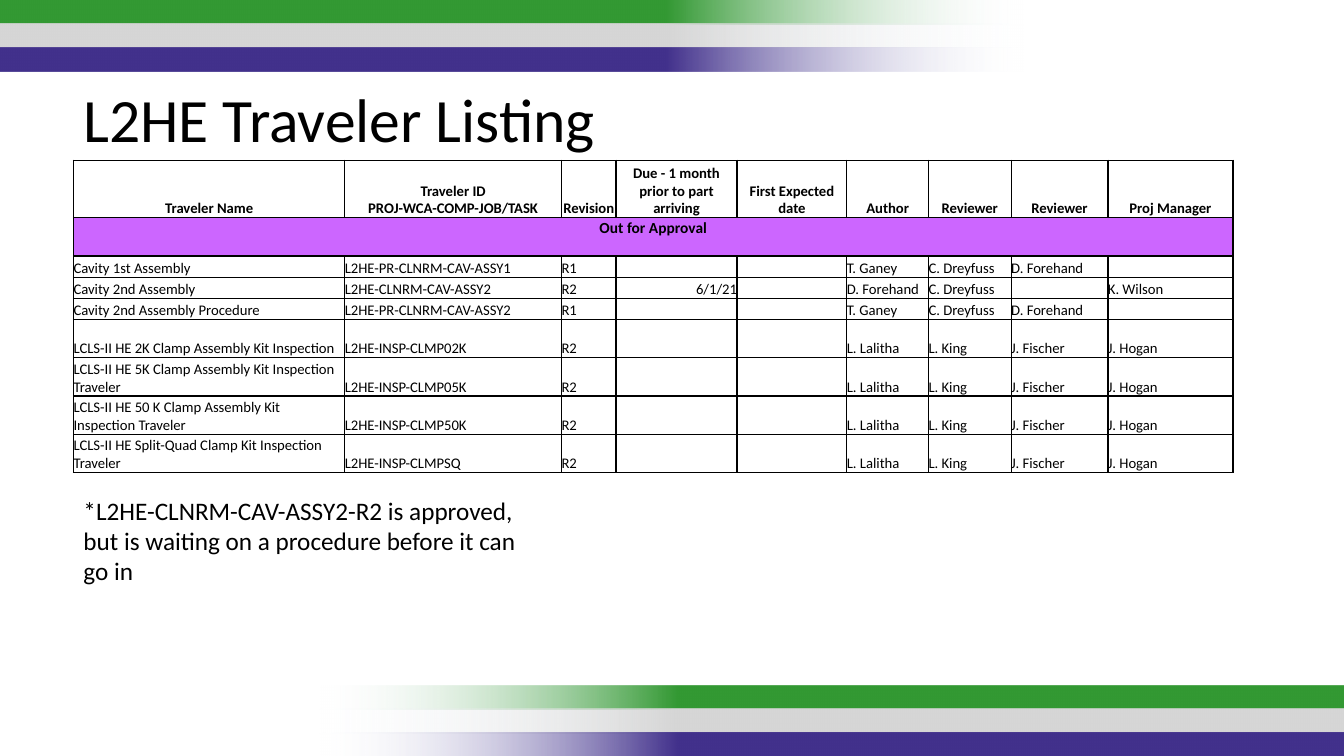
from lxml.etree import SubElement
from pptx import Presentation
from pptx.dml.color import RGBColor
from pptx.enum.shapes import MSO_SHAPE
from pptx.enum.text import MSO_ANCHOR, PP_ALIGN
from pptx.oxml.ns import qn
from pptx.util import Inches, Pt

BLACK = RGBColor(0x00, 0x00, 0x00)
GREEN = RGBColor(0x33, 0x99, 0x33)
GREY = RGBColor(0xD6, 0xD6, 0xD6)
INDIGO = RGBColor(0x42, 0x31, 0x8C)
PALE = RGBColor(0xF7, 0xFA, 0xFD)
VIOLET = RGBColor(0xCC, 0x66, 0xFF)

COLUMN_WIDTHS = [2.69, 2.15, 0.54, 1.2, 1.09, 0.81, 0.82, 0.96, 1.24]
ROW_HEIGHTS = [0.57, 0.38] + [0.21] * 3 + [0.38] * 4
HEADINGS = ["Traveler Name", "Traveler ID\nPROJ-WCA-COMP-JOB/TASK", "Revision",
            "Due - 1 month prior to part arriving", "First Expected date",
            "Author", "Reviewer", "Reviewer", "Proj Manager"]
CAVITY_TEAM = ["T. Ganey", "C. Dreyfuss", "D. Forehand", ""]
CLAMP_TEAM = ["L. Lalitha", "L. King", "J. Fischer", "J. Hogan"]
CLAMP_KITS = [("2K Clamp Assembly Kit Inspection", "02K"),
              ("5K Clamp Assembly Kit Inspection Traveler", "05K"),
              ("50 K Clamp Assembly Kit Inspection Traveler", "50K"),
              ("Split-Quad Clamp Kit Inspection Traveler", "SQ")]
TRAVELERS = [
    ["Cavity 1st Assembly", "L2HE-PR-CLNRM-CAV-ASSY1", "R1", "", ""] + CAVITY_TEAM,
    ["Cavity 2nd Assembly", "L2HE-CLNRM-CAV-ASSY2", "R2", "6/1/21", "",
     "D. Forehand", "C. Dreyfuss", "", "K. Wilson"],
    ["Cavity 2nd Assembly Procedure", "L2HE-PR-CLNRM-CAV-ASSY2", "R1", "", ""] + CAVITY_TEAM,
] + [[f"LCLS-II HE {kit}", f"L2HE-INSP-CLMP{code}", "R2", "", ""] + CLAMP_TEAM
     for kit, code in CLAMP_KITS]
DUE_COLUMN = 3


class TravelerPage:
    """Holds the text style and the current slide."""

    def __init__(self, page, font="Calibri", color=BLACK):
        self.page, self.font, self.color = page, font, color

    def add_words(self, para, words, size, bold=False):
        for index, line in enumerate(words.split("\n")):
            if index:
                para.add_line_break()
            span = para.add_run()
            span.text = line
            span.font.name, span.font.size, span.font.bold = self.font, Pt(size), bold
            span.font.color.rgb = self.color

    def add_stripe(self, left, top, color, rotation=0):
        bar = self.page.shapes.add_shape(MSO_SHAPE.RECTANGLE, Inches(left), Inches(top),
                                         Inches(10.17), Inches(0.24))
        bar.shadow.inherit = False
        bar.rotation = rotation
        bar.line.fill.background()
        bar.fill.gradient()
        bar.fill.gradient_angle = 0
        clear, solid = bar.fill.gradient_stops
        clear.position, clear.color.rgb = 0, PALE
        solid.position, solid.color.rgb = 0.35, color
        first_color = next(bar.element.iter(qn("a:srgbClr")))
        SubElement(first_color, qn("a:alpha"), val="0")

    def add_text(self, left, top, width, height, words, size):
        box = self.page.shapes.add_textbox(Inches(left), Inches(top),
                                           Inches(width), Inches(height))
        box.text_frame.word_wrap = True
        self.add_words(box.text_frame.paragraphs[0], words, size)

    def fill_cell(self, cell, words, size=10.5, bold=False, align=PP_ALIGN.LEFT,
                  anchor=MSO_ANCHOR.BOTTOM, inset=0, fill=None):
        cell.margin_left = cell.margin_right = cell.margin_top = Inches(inset)
        cell.margin_bottom = 0
        cell.vertical_anchor = anchor
        para = cell.text_frame.paragraphs[0]
        para.alignment = align
        if words:
            self.add_words(para, words, size, bold)
        else:
            SubElement(para._p, qn("a:endParaRPr"), sz=str(int(size * 100)))
        # Borders come before the fill in the cell properties
        properties = cell._tc.get_or_add_tcPr()
        for side in ("a:lnL", "a:lnR", "a:lnT", "a:lnB"):
            line = SubElement(properties, qn(side), w=str(Pt(1)))
            SubElement(SubElement(line, qn("a:solidFill")), qn("a:srgbClr"), val=str(BLACK))
        if fill is None:
            cell.fill.background()
        else:
            cell.fill.solid()
            cell.fill.fore_color.rgb = fill

    def add_listing(self, left, top):
        frame = self.page.shapes.add_table(
            len(ROW_HEIGHTS), len(COLUMN_WIDTHS), Inches(left), Inches(top),
            Inches(sum(COLUMN_WIDTHS)), Inches(sum(ROW_HEIGHTS)))
        grid = frame.table
        grid.first_row = grid.horz_banding = False
        for column, width in zip(grid.columns, COLUMN_WIDTHS):
            column.width = Inches(width)
        for row, height in zip(grid.rows, ROW_HEIGHTS):
            row.height = Inches(height)
        # Headings and the status band
        for col, heading in enumerate(HEADINGS):
            self.fill_cell(grid.cell(0, col), heading, bold=True,
                           align=PP_ALIGN.CENTER, inset=0.01)
            self.fill_cell(grid.cell(1, col), "" if col else "Out for Approval", size=11,
                           bold=True, align=PP_ALIGN.CENTER, anchor=MSO_ANCHOR.TOP,
                           inset=0.01, fill=VIOLET)
        grid.cell(1, 0).merge(grid.cell(1, len(HEADINGS) - 1))
        # Travelers
        for row, traveler in enumerate(TRAVELERS, start=2):
            for col, words in enumerate(traveler):
                align = PP_ALIGN.RIGHT if col == DUE_COLUMN else PP_ALIGN.LEFT
                self.fill_cell(grid.cell(row, col), words, align=align)


def main():
    deck = Presentation()
    deck.slide_width, deck.slide_height = Inches(13.33), Inches(7.5)
    listing = TravelerPage(deck.slides.add_slide(deck.slide_layouts[6]))

    # Stripes along the top and bottom edges
    for left, top, rotation in ((-0.01, 0, 180), (3.17, 6.8, 0)):
        for index, color in enumerate((GREEN, GREY, INDIGO)):
            listing.add_stripe(left, top + index * 0.235, color, rotation)

    # Table, title and note
    listing.add_listing(0.73, 1.59)
    listing.add_text(0.73, 0.75, 10.31, 0.84, "L2HE Traveler Listing", 44)
    listing.add_text(0.73, 4.86, 4.77, 1.01, "*L2HE-CLNRM-CAV-ASSY2-R2 is approved, but is "
                     "waiting on a procedure before it can go in", 18)
    deck.save("out.pptx")


if __name__ == "__main__":
    main()
